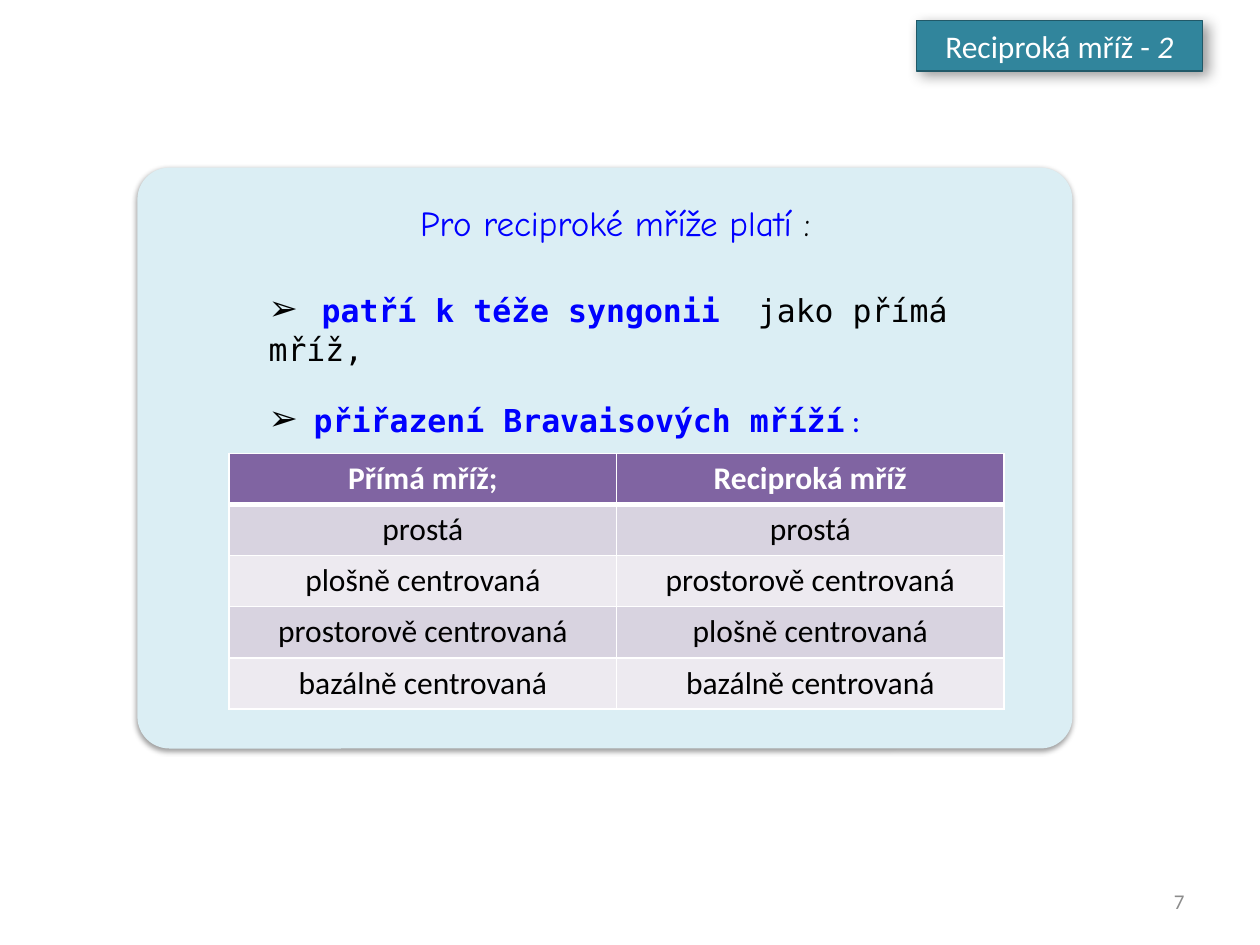
import lxml.etree
import pptx
import pptx.dml.color
import pptx.enum.shapes
import pptx.enum.text
import pptx.oxml
import pptx.oxml.ns
import pptx.util

Cm = pptx.util.Cm
Pt = pptx.util.Pt
RGB = pptx.dml.color.RGBColor.from_string
qn = pptx.oxml.ns.qn
ALIGN = pptx.enum.text.PP_ALIGN

COLORS = {
    "teal": "31859C", "teal_dark": "215968", "panel": "DBEEF4", "panel_line": "3795AF",
    "blue": "0000FF", "black": "000000", "white": "FFFFFF", "gray": "8C8C8C",
    "header": "8064A2", "band_dark": "D8D3E0", "band_light": "EDEAF0",
}
MONO = "DejaVu Sans Mono"


def add_run(paragraph, text, font_name, size, color, bold=False, italic=False):
    run = paragraph.add_run()
    run.text = text
    run.font.name = font_name
    run.font.size = Pt(size)
    run.font.bold = bold
    run.font.italic = italic
    run.font.color.rgb = RGB(COLORS[color])


def style_box(shape, fill, line, line_width, blur, distance, angle, opacity):
    shape.fill.solid()
    shape.fill.fore_color.rgb = RGB(COLORS[fill])
    shape.line.color.rgb = RGB(COLORS[line])
    shape.line.width = Pt(line_width)
    shape.shadow.inherit = False
    effects = shape._element.spPr.find(qn("a:effectLst"))
    shadow = lxml.etree.SubElement(
        effects, qn("a:outerShdw"), blurRad=str(Pt(blur)), dist=str(Pt(distance)),
        dir=str(angle * 60000), algn="tl", rotWithShape="0")
    color = lxml.etree.SubElement(shadow, qn("a:srgbClr"), val=COLORS["black"])
    lxml.etree.SubElement(color, qn("a:alpha"), val=str(opacity * 1000))


presentation = pptx.Presentation()
presentation.slide_width = Cm(25.4)
presentation.slide_height = Cm(19.05)
slide = presentation.slides.add_slide(presentation.slide_layouts[1])
title, body = slide.placeholders

title.left, title.top, title.width, title.height = Cm(18.47), Cm(0.41), Cm(5.77), Cm(1.02)
style_box(title, "teal", "teal_dark", 0.75, 8, 4, 40, 40)
title.text_frame.auto_size = pptx.enum.text.MSO_AUTO_SIZE.NONE
paragraph = title.text_frame.paragraphs[0]
paragraph.alignment = ALIGN.CENTER
add_run(paragraph, "Reciproká mříž - ", "Calibri", 18, "white")
add_run(paragraph, "2", "Calibri", 18, "white", italic=True)

panel = slide.shapes.add_shape(
    pptx.enum.shapes.MSO_SHAPE.ROUNDED_RECTANGLE, Cm(2.77), Cm(3.38), Cm(18.85), Cm(11.71))
panel.adjustments[0] = 0.055
style_box(panel, "panel", "panel_line", 1, 3.1, 1.6, 90, 38)
panel.line.fill.background()
body._element.addprevious(panel._element)

body.left, body.top, body.width, body.height = Cm(5.16), Cm(3.94), Cm(14.48), Cm(4.85)
body.fill.solid()
body.fill.fore_color.rgb = RGB(COLORS["panel"])
body.text_frame.auto_size = pptx.enum.text.MSO_AUTO_SIZE.NONE
heading = body.text_frame.paragraphs[0]
heading.alignment = ALIGN.CENTER
heading.space_before = Pt(0)
heading.space_after = Pt(25)
add_run(heading, "Pro reciproké mříže platí ", "Comic Neue", 20, "blue")
add_run(heading, ":", "Comic Neue", 20, "black")
properties = heading._p.get_or_add_pPr()
properties.set("marL", "0")
properties.set("indent", "0")
lxml.etree.SubElement(properties, qn("a:buNone"))

rules = [
    (1.07, "patří k téže syngonii ", " jako přímá mříž,", MONO, "black"),
    (0.91, "přiřazení Bravaisových mříží", " :", "Calibri", "blue"),
]
for text_start, key_text, ending, ending_font, ending_color in rules:
    paragraph = body.text_frame.add_paragraph()
    paragraph.alignment = ALIGN.LEFT
    paragraph.space_before = Pt(0)
    paragraph.space_after = Pt(17)
    add_run(paragraph, "\t", "Calibri", 20, "black")
    add_run(paragraph, key_text, MONO, 18, "blue", bold=True)
    add_run(paragraph, ending, ending_font, 18, ending_color)
    properties = paragraph._p.get_or_add_pPr()
    properties.set("marL", "0")
    properties.set("indent", "0")
    lxml.etree.SubElement(properties, qn("a:buChar"), char="➢")
    tabs = lxml.etree.SubElement(properties, qn("a:tabLst"))
    lxml.etree.SubElement(tabs, qn("a:tab"), pos=str(Cm(text_start)), algn="l")

lattices = [
    ("Přímá mříž;", "Reciproká mříž"),
    ("prostá", "prostá"),
    ("plošně centrovaná", "prostorově centrovaná"),
    ("prostorově centrovaná", "plošně centrovaná"),
    ("bazálně centrovaná", "bazálně centrovaná"),
]
table = slide.shapes.add_table(
    len(lattices), 2, Cm(4.62), Cm(9.14), Cm(15.62), Cm(1.03 * len(lattices))).table
for row, names in enumerate(lattices):
    is_header = row == 0
    fill = "header" if is_header else ("band_dark" if row % 2 else "band_light")
    for column, name in enumerate(names):
        cell = table.cell(row, column)
        cell_properties = cell._tc.get_or_add_tcPr()
        for side in "LRTB":
            thick = (is_header and side == "B") or (row == 1 and side == "T")
            border = lxml.etree.SubElement(
                cell_properties, qn(f"a:ln{side}"), w=str(Pt(3 if thick else 1)))
            border_fill = lxml.etree.SubElement(border, qn("a:solidFill"))
            lxml.etree.SubElement(border_fill, qn("a:srgbClr"), val=COLORS["white"])
        cell.fill.solid()
        cell.fill.fore_color.rgb = RGB(COLORS[fill])
        paragraph = cell.text_frame.paragraphs[0]
        paragraph.alignment = ALIGN.CENTER
        add_run(paragraph, name, "Calibri", 18, "white" if is_header else "black", bold=is_header)

page_number = slide.shapes.add_textbox(Cm(18.21), Cm(17.65), Cm(5.92), Cm(1.02))
page_number.text_frame.word_wrap = True
page_number.text_frame.vertical_anchor = pptx.enum.text.MSO_ANCHOR.MIDDLE
paragraph = page_number.text_frame.paragraphs[0]
paragraph.alignment = ALIGN.RIGHT
add_run(paragraph, "7", "Calibri", 12, "gray")

presentation.save("out.pptx")
